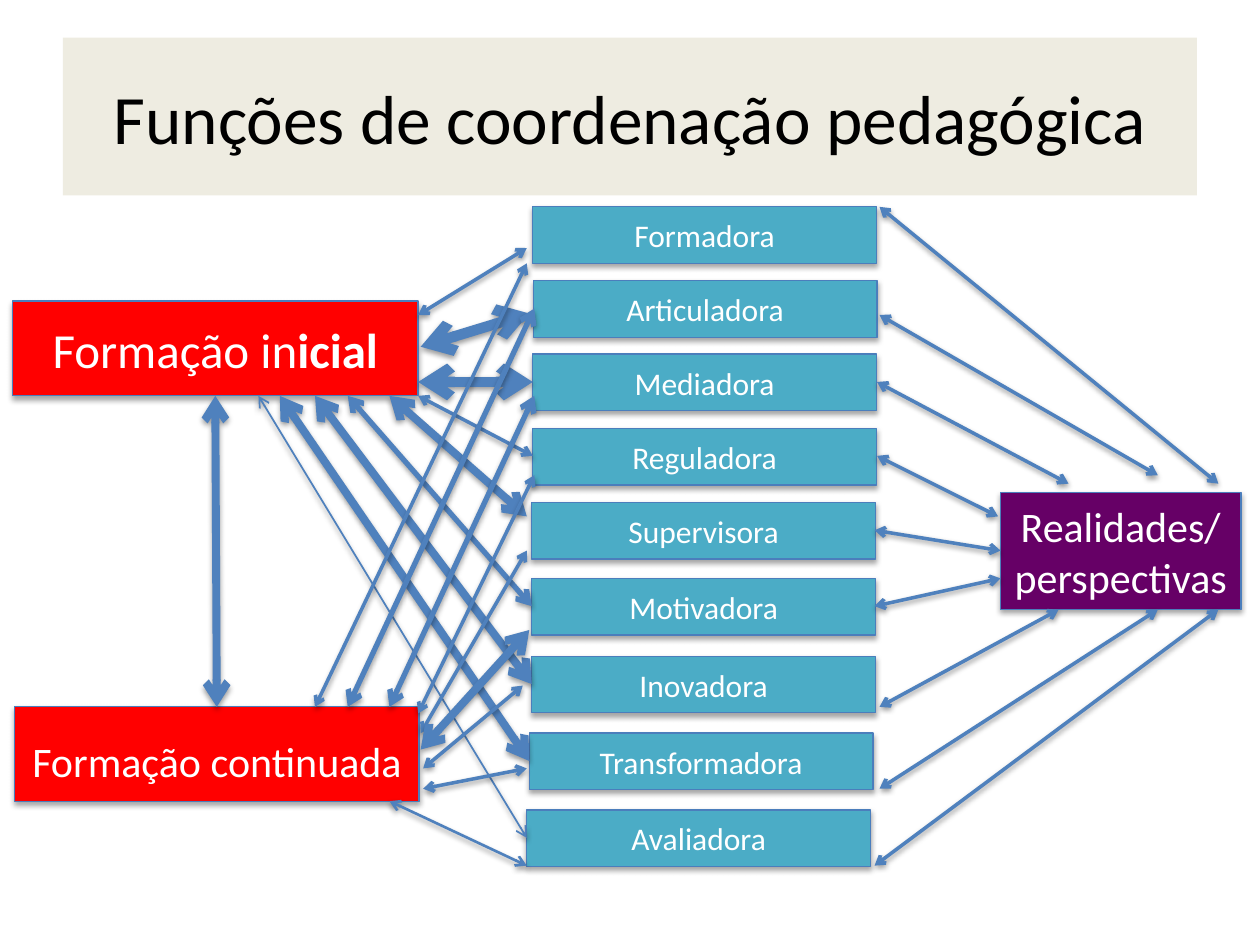
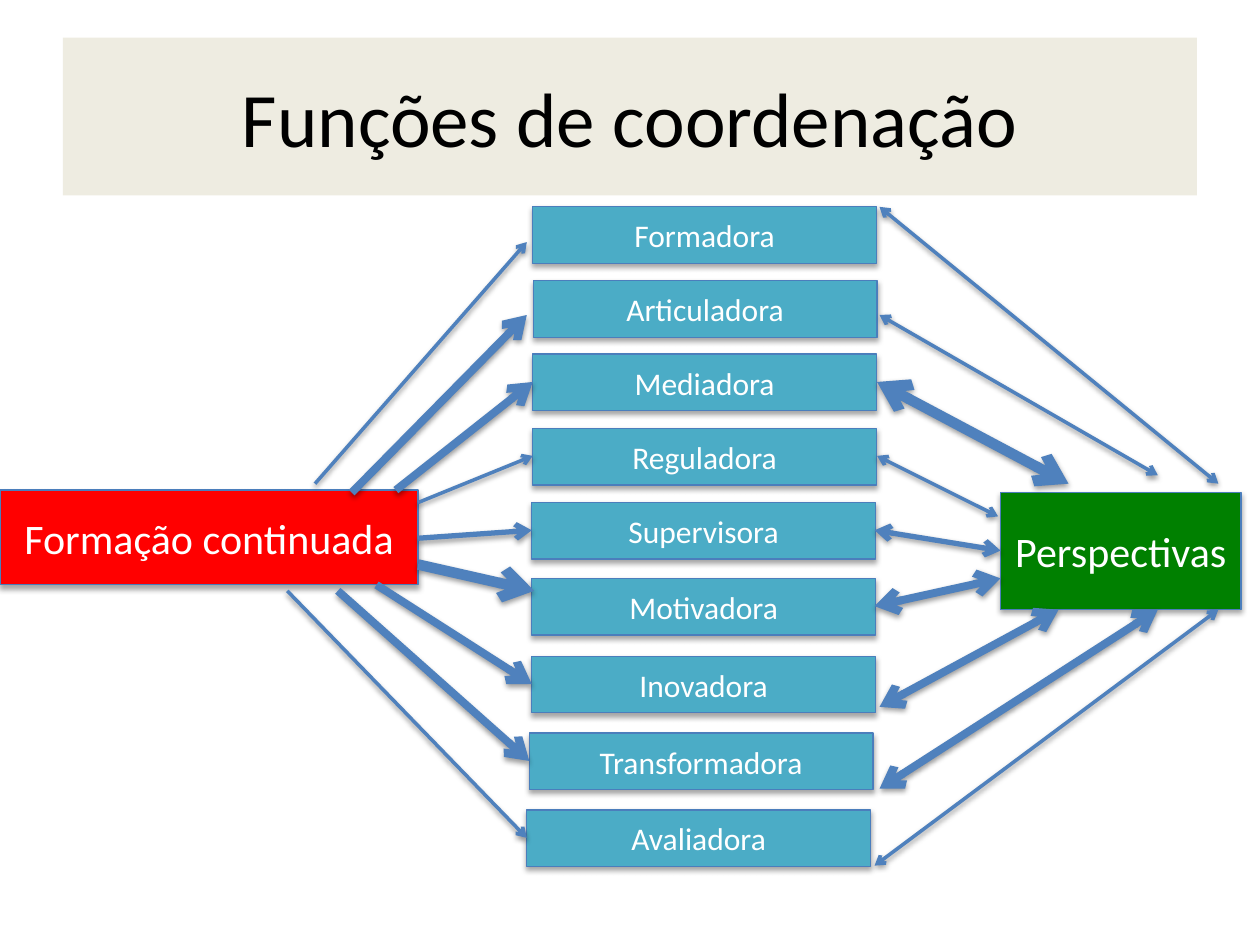
from lxml.etree import SubElement
from pptx import Presentation
from pptx.dml.color import RGBColor
from pptx.enum.shapes import MSO_CONNECTOR, MSO_SHAPE
from pptx.enum.text import MSO_ANCHOR, PP_ALIGN
from pptx.oxml.ns import qn
from pptx.util import Cm, Pt

BLACK = RGBColor(0x00, 0x00, 0x00)
WHITE = RGBColor(0xFF, 0xFF, 0xFF)
SAND = RGBColor(0xEE, 0xEC, 0xE1)
RED = RGBColor(0xFF, 0x00, 0x00)
PURPLE = RGBColor(0x66, 0x00, 0x66)
GREEN = RGBColor(0x00, 0x80, 0x00)
TEAL = RGBColor(0x4B, 0xAC, 0xC6)
OUTLINE = RGBColor(0x4B, 0x7E, 0xBC)
ARROW = RGBColor(0x4F, 0x81, 0xBD)

# Functions in the middle column: name, left, top (cm)
FUNCTIONS = [
    ("Formadora", 10.74, 4.17),
    ("Articuladora", 10.75, 5.66),
    ("Mediadora", 10.74, 7.14),
    ("Reguladora", 10.74, 8.64),
    ("Supervisora", 10.72, 10.13),
    ("Motivadora", 10.72, 11.66),
    ("Inovadora", 10.72, 13.23),
    ("Transformadora", 10.67, 14.78),
    ("Avaliadora", 10.62, 16.33),
]

# Links: from x, from y, to x, to y (cm), one per function
PERSPECTIVE_LINKS = [
    (17.73, 4.17, 24.56, 9.75),
    (17.73, 6.35, 23.34, 9.58),
    (17.68, 7.7, 21.54, 9.75),
    (17.68, 9.19, 20.12, 10.41),
    (17.63, 10.69, 20.17, 11.1),
    (17.63, 12.22, 20.17, 11.66),
    (17.73, 14.25, 21.34, 12.29),
    (17.73, 15.9, 23.34, 12.29),
    (17.63, 17.45, 24.56, 12.29),
]
INITIAL_LINKS = [
    (8.43, 6.35, 10.62, 5),
    (8.48, 6.99, 10.67, 6.32),
    (8.43, 7.7, 10.74, 7.7),
    (8.43, 7.98, 10.74, 9.19),
    (7.85, 7.98, 10.62, 10.41),
    (7.01, 7.98, 10.72, 12.22),
    (6.35, 7.98, 10.72, 13.79),
    (5.64, 7.98, 10.67, 15.34),
    (5.21, 7.98, 10.62, 16.89),
]
CONTINUED_LINKS = [
    (6.35, 14.25, 10.62, 5.31),
    (7.01, 14.25, 10.77, 6.22),
    (7.85, 14.25, 10.77, 7.98),
    (8.43, 14.38, 10.77, 9.58),
    (8.48, 14.78, 10.62, 11.1),
    (8.48, 15.11, 10.67, 12.7),
    (8.53, 15.49, 10.54, 13.82),
    (8.53, 15.9, 10.62, 15.49),
    (7.85, 16.15, 10.62, 17.45),
]
CONTINUED_ONLY_LINKS = [
    (6.35, 9.75, 10.62, 4.88),
    (7.09, 9.93, 10.62, 6.35),
    (7.98, 9.88, 10.74, 7.7),
    (8.43, 10.13, 10.74, 9.19),
    (8.43, 10.85, 10.72, 10.69),
    (8.43, 11.38, 10.77, 11.91),
    (7.59, 11.79, 10.72, 13.79),
    (6.81, 11.91, 10.67, 15.34),
    (5.79, 11.91, 10.62, 16.89),
]


class Diagram:
    """Shared style and the slide being drawn."""

    font = "Calibri"

    def __init__(self):
        self.deck = Presentation()
        self.deck.slide_width, self.deck.slide_height = Cm(25.4), Cm(19.05)
        self.slide = None

    def new_slide(self, title, size):
        self.slide = self.deck.slides.add_slide(self.deck.slide_layouts[6])
        band = self.rectangle(title, (1.27, 0.76, 22.86, 3.18), SAND, size, BLACK)
        band.line.fill.background()
        band.shadow.inherit = False

    def rectangle(self, text, place, fill, size, color=WHITE):
        shape = self.slide.shapes.add_shape(
            MSO_SHAPE.RECTANGLE, *(Cm(length) for length in place))
        shape.fill.solid()
        shape.fill.fore_color.rgb = fill
        frame = shape.text_frame
        frame.text = text
        frame.word_wrap = True
        frame.vertical_anchor = MSO_ANCHOR.MIDDLE
        for paragraph in frame.paragraphs:
            paragraph.alignment = PP_ALIGN.CENTER
            for run in paragraph.runs:
                self.format_run(run, size, color)
        return shape

    def format_run(self, run, size, color=WHITE, bold=False):
        run.font.name = self.font
        run.font.size = Pt(size)
        run.font.color.rgb = color
        run.font.bold = bold

    def box(self, text, place, fill, size):
        shape = self.rectangle(text, place, fill, size)
        shape.line.color.rgb = OUTLINE
        shape.line.width = Pt(0.75)
        self.drop_shadow(shape, distance=23000, opacity=35000)
        return shape

    def drop_shadow(self, shape, distance, opacity):
        effects = SubElement(shape.element.spPr, qn("a:effectLst"))
        shadow = SubElement(effects, qn("a:outerShdw"), blurRad="40000",
                            dist=str(distance), dir="5400000", rotWithShape="0")
        tone = SubElement(shadow, qn("a:srgbClr"), val=str(BLACK))
        SubElement(tone, qn("a:alpha"), val=str(opacity))

    def arrow(self, ends, width, two_way=True):
        link = self.slide.shapes.add_connector(
            MSO_CONNECTOR.STRAIGHT, *(Cm(length) for length in ends))
        link.line.color.rgb = ARROW
        link.line.width = Pt(width)
        outline = link.element.spPr.find(qn("a:ln"))
        for end in ("a:headEnd", "a:tailEnd") if two_way else ("a:tailEnd",):
            SubElement(outline, qn(end), type="arrow")
        self.drop_shadow(link, distance=20000, opacity=38000)

    def arrows(self, links, widths, two_way=True):
        for ends, width in zip(links, widths):
            self.arrow(ends, width, two_way)

    def functions(self):
        for name, left, top in FUNCTIONS:
            self.box(name, (left, top, 6.93, 1.14), TEAL, 18)

    def perspectives(self, text, fill):
        self.box(text, (20.17, 9.93, 4.85, 2.36), fill, 24)


def main():
    diagram = Diagram()

    # Slide 1: initial and continued training
    diagram.new_slide("Funções de coordenação pedagógica", 39.6)
    initial = diagram.box("Formação in", (0.25, 6.07, 8.18, 1.91), RED, 28)
    ending = initial.text_frame.paragraphs[0].add_run()
    ending.text = "icial"
    diagram.format_run(ending, 28, bold=True)
    continued = diagram.box("Formação continuada", (0.3, 14.25, 8.15, 1.91), RED, 24)
    continued.text_frame.margin_top = Cm(0.37)
    diagram.perspectives("Realidades/\nperspectivas", PURPLE)
    diagram.functions()
    diagram.arrow((4.34, 7.98, 4.37, 14.25), 4.5)
    diagram.arrows(PERSPECTIVE_LINKS, [2] * len(FUNCTIONS))
    diagram.arrows(INITIAL_LINKS, [2, 6, 6, 2, 4.5, 3, 4.5, 4.5, 1])
    diagram.arrows(CONTINUED_LINKS, [2, 3, 3, 2, 2, 4.5, 2, 2, 1.5])

    # Slide 2: continued training only
    diagram.new_slide("Funções de coordenação", 44)
    diagram.box("Formação continuada", (0, 9.88, 8.43, 1.91), RED, 24)
    diagram.perspectives("Perspectivas", GREEN)
    diagram.functions()
    diagram.arrows(PERSPECTIVE_LINKS, [2, 2, 6, 2, 3, 4.5, 4.5, 4.5, 2])
    diagram.arrows(CONTINUED_ONLY_LINKS, [2, 4.5, 4.5, 2, 3, 6, 4.5, 4.5, 2],
                   two_way=False)

    diagram.deck.save("out.pptx")


if __name__ == "__main__":
    main()
